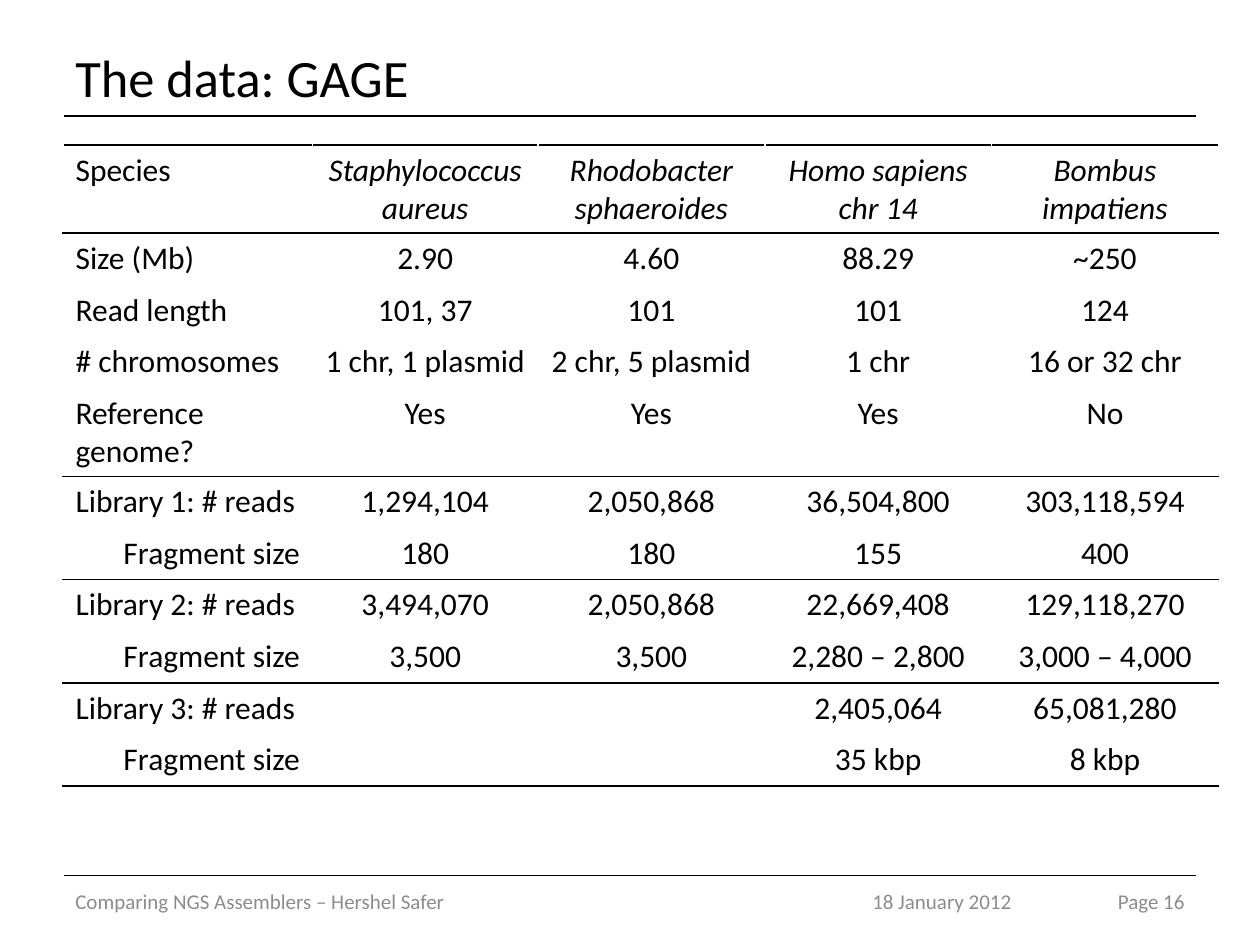
from dataclasses import dataclass

from lxml.etree import SubElement
from pptx import Presentation
from pptx.dml.color import RGBColor
from pptx.enum.shapes import MSO_CONNECTOR
from pptx.enum.text import MSO_ANCHOR, PP_ALIGN
from pptx.oxml.ns import qn
from pptx.util import Inches, Pt


@dataclass(frozen=True)
class Theme:
    font: str = "Calibri"
    ink: str = "000000"
    paper: str = "FFFFFF"
    muted: str = "8C8C8C"
    title_size: int = 30
    table_size: int = 18
    footer_size: int = 12
    rule_width: float = 0.75
    border_width: float = 1


# The grid has 100 columns and 75 rows on a 10 by 7.5 inch slide
GRID_COLUMNS, GRID_ROWS = 100, 75
LEFT, RIGHT = 5, 95
RULE_LEFT, RULE_RIGHT = 5.1, 94.9
FOOTER_TOP, FOOTER_HEIGHT = 69.5, 4

COLUMN_WIDTHS = [19.8, 17.9, 18, 18, 18]
ROW_HEIGHT = 4.1
RULED_ROWS = {-1, 0, 4, 6, 8, 10}  # rows with a black line below; -1 is the top edge

TABLE_ROWS = [
    ["Species", "Staphylococcus\naureus", "Rhodobacter\nsphaeroides",
     "Homo sapiens chr 14", "Bombus\nimpatiens"],
    ["Size (Mb)", "2.90", "4.60", "88.29", "~250"],
    ["Read length", "101, 37", "101", "101", "124"],
    ["# chromosomes", "1 chr, 1 plasmid", "2 chr, 5 plasmid", "1 chr", "16 or 32 chr"],
    ["Reference genome?", "Yes", "Yes", "Yes", "No"],
    ["Library 1: # reads", "1,294,104", "2,050,868", "36,504,800", "303,118,594"],
    ["Fragment size", "180", "180", "155", "400"],
    ["Library 2: # reads", "3,494,070", "2,050,868", "22,669,408", "129,118,270"],
    ["Fragment size", "3,500", "3,500", "2,280 – 2,800", "3,000 – 4,000"],
    ["Library 3: # reads", "", "", "2,405,064", "65,081,280"],
    ["Fragment size", "", "", "35 kbp", "8 kbp"],
]


def write_text(frame, text, *, font, size, color, align=PP_ALIGN.LEFT, italic=False):
    """Write each line of the text as one formatted paragraph."""
    for index, line in enumerate(text.split("\n")):
        paragraph = frame.add_paragraph() if index else frame.paragraphs[0]
        paragraph.alignment = align
        paragraph.font.size = Pt(size)
        if line:
            run = paragraph.add_run()
            run.text = line
            run.font.name = font
            run.font.size = Pt(size)
            run.font.italic = italic
            run.font.color.rgb = RGBColor.from_string(color)


class SlideBuilder:
    def __init__(self, presentation, theme):
        self.theme = theme
        self.column = presentation.slide_width / GRID_COLUMNS
        self.row = presentation.slide_height / GRID_ROWS
        self.slide = presentation.slides.add_slide(presentation.slide_layouts[6])

    def place(self, left, top, width, height):
        return (round(left * self.column), round(top * self.row),
                round(width * self.column), round(height * self.row))

    def rule(self, top):
        left, y, right, _ = self.place(RULE_LEFT, top, RULE_RIGHT, 0)
        connector = self.slide.shapes.add_connector(MSO_CONNECTOR.STRAIGHT, left, y, right, y)
        connector.line.color.rgb = RGBColor.from_string(self.theme.ink)
        connector.line.width = Pt(self.theme.rule_width)
        SubElement(connector._element.spPr, qn("a:effectLst"))

    def text(self, text, left, top, width, height, **text_format):
        shape = self.slide.shapes.add_textbox(*self.place(left, top, width, height))
        frame = shape.text_frame
        frame.word_wrap = True
        frame.vertical_anchor = MSO_ANCHOR.MIDDLE
        write_text(frame, text, font=self.theme.font, **text_format)

    def footer(self, text, left, width, align):
        self.text(text, left, FOOTER_TOP, width, FOOTER_HEIGHT, align=align,
                  size=self.theme.footer_size, color=self.theme.muted)

    def border(self, cell, side, color):
        line = SubElement(cell._tc.get_or_add_tcPr(), qn(f"a:ln{side}"),
                          w=str(Pt(self.theme.border_width)))
        fill = SubElement(line, qn("a:solidFill"))
        SubElement(fill, qn("a:srgbClr"), val=color)

    def cell(self, cell, text, row, column):
        theme = self.theme
        if column:
            align = PP_ALIGN.CENTER
        else:
            align = PP_ALIGN.RIGHT if text == "Fragment size" else PP_ALIGN.LEFT
        write_text(cell.text_frame, text, font=theme.font, size=theme.table_size,
                   color=theme.ink, align=align, italic=row == 0 and column > 0)
        edge_above, edge_below = (
            theme.ink if edge in RULED_ROWS else theme.paper for edge in (row - 1, row))
        for side, color in zip("LRTB", (theme.paper, theme.paper, edge_above, edge_below)):
            self.border(cell, side, color)
        cell.fill.background()

    def table(self, rows, left, top):
        box = self.place(left, top, sum(COLUMN_WIDTHS), ROW_HEIGHT * len(rows))
        table = self.slide.shapes.add_table(len(rows), len(COLUMN_WIDTHS), *box).table
        table.first_row = table.horz_banding = False
        for column, width in zip(table.columns, COLUMN_WIDTHS):
            column.width = round(width * self.column)
        for row_index, values in enumerate(rows):
            table.rows[row_index].height = round(ROW_HEIGHT * self.row)
            for column_index, value in enumerate(values):
                self.cell(table.cell(row_index, column_index), value, row_index, column_index)


def main():
    presentation = Presentation()
    presentation.slide_width, presentation.slide_height = Inches(10), Inches(7.5)
    theme = Theme()
    builder = SlideBuilder(presentation, theme)

    # Title and the rules that frame the content
    builder.rule(9.2)
    builder.rule(FOOTER_TOP)
    builder.text("The data: GAGE", LEFT, 3, RIGHT - LEFT, 6.1,
                 size=theme.title_size, color=theme.ink)

    # Data sets by species
    builder.table(TABLE_ROWS, LEFT, 11.5)

    # Footer
    builder.footer("Comparing NGS Assemblers – Hershel Safer", LEFT, 60, PP_ALIGN.LEFT)
    builder.footer("18 January 2012", 65.7, 18.1, PP_ALIGN.CENTER)
    builder.footer("Page 16", 84.6, 10.4, PP_ALIGN.RIGHT)

    presentation.save("out.pptx")


if __name__ == "__main__":
    main()
